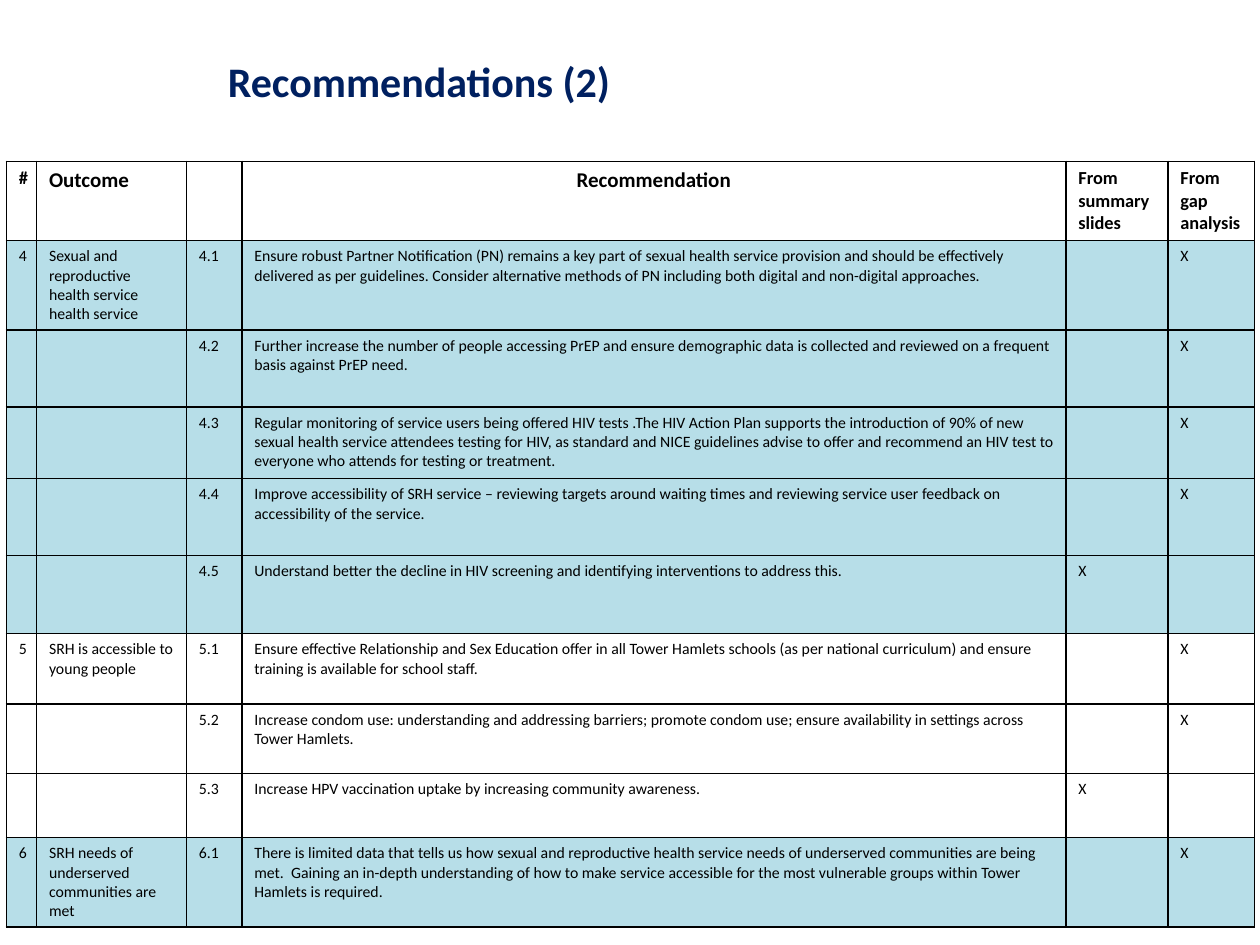
import pptx
import pptx.dml.color
import pptx.enum.text
import pptx.oxml.ns
import pptx.util
from lxml import etree

Inches, Pt = pptx.util.Inches, pptx.util.Pt
RGBColor = pptx.dml.color.RGBColor
ALIGN = pptx.enum.text.PP_ALIGN
qn = pptx.oxml.ns.qn

NAVY = RGBColor(0x00, 0x20, 0x60)
BLACK = RGBColor(0x00, 0x00, 0x00)
WHITE = RGBColor(0xFF, 0xFF, 0xFF)
PALE_BLUE = RGBColor(0xB7, 0xDE, 0xE8)

COLUMN_WIDTHS = [0.23, 1.19, 0.44, 6.54, 0.81, 0.69]
ROW_HEIGHTS = [0.63, 0.71, 0.61, 0.57, 0.61, 0.62, 0.56, 0.55, 0.51, 0.71]
HEADER_SIZES = [10.5, 12, 12, 12, 10.5, 10.5]
HEADINGS = ["#", "Outcome", "", "Recommendation", "From summary\nslides", "From\ngap\nanalysis"]
SUMMARY, GAP = ["X", ""], ["", "X"]

# Each outcome: number, name, row colour, and its recommendations with their origin
OUTCOMES = [
    (4, "Sexual and reproductive health service health service", PALE_BLUE, [
        ("Ensure robust Partner Notification (PN) remains a key part of sexual health service "
         "provision and should be effectively delivered as per guidelines. Consider alternative "
         "methods of PN including both digital and non-digital approaches.", GAP),
        ("Further increase the number of people accessing PrEP and ensure demographic data is "
         "collected and reviewed on a frequent basis against PrEP need.", GAP),
        ("Regular monitoring of service users being offered HIV tests .The HIV Action Plan supports "
         "the introduction of 90% of new sexual health service attendees testing for HIV, as "
         "standard and NICE guidelines advise to offer and recommend an HIV test to everyone who "
         "attends for testing or treatment.", GAP),
        ("Improve accessibility of SRH service – reviewing targets around waiting times and "
         "reviewing service user feedback on accessibility of the service.", GAP),
        ("Understand better the decline in HIV screening and identifying interventions to "
         "address this.", SUMMARY),
    ]),
    (5, "SRH is accessible to young people", WHITE, [
        ("Ensure effective Relationship and Sex Education offer in all Tower Hamlets schools (as "
         "per national curriculum) and ensure training is available for school staff.", GAP),
        ("Increase condom use: understanding and addressing barriers; promote condom use; ensure "
         "availability in settings across Tower Hamlets.", GAP),
        ("Increase HPV vaccination uptake by increasing community awareness.", SUMMARY),
    ]),
    (6, "SRH needs of underserved communities are met", PALE_BLUE, [
        ("There is limited data that tells us how sexual and reproductive health service needs of "
         "underserved communities are being met.  Gaining an in-depth understanding of how to make "
         "service accessible for the most vulnerable groups within Tower Hamlets is required.", GAP),
    ]),
]


def write(frame, text, size, bold, color, align=ALIGN.LEFT):
    frame.text = text
    font_format = {"name": "Calibri", "size": Pt(size), "bold": bold}
    for paragraph in frame.paragraphs:
        paragraph.alignment = align
        for key, value in font_format.items():
            setattr(paragraph.font, key, value)
            for run in paragraph.runs:
                setattr(run.font, key, value)
        for run in paragraph.runs:
            run.font.color.rgb = color


def outline(cell):
    """Draw a 1 pt black border on all four sides; call before filling the cell."""
    properties = cell._tc.get_or_add_tcPr()
    for side in ("a:lnL", "a:lnR", "a:lnT", "a:lnB"):
        line = etree.SubElement(properties, qn(side), w=str(Pt(1)))
        solid = etree.SubElement(line, qn("a:solidFill"))
        etree.SubElement(solid, qn("a:srgbClr"), val=str(BLACK))


deck = pptx.Presentation()
deck.slide_width, deck.slide_height = Inches(10), Inches(7.5)
slide = deck.slides.add_slide(deck.slide_layouts[6])

title = slide.shapes.add_textbox(Inches(1.71), Inches(0.39), Inches(7.43), Inches(0.77))
title.text_frame.word_wrap = True
write(title.text_frame, "Recommendations (2)", 24, True, NAVY)

lines = [(HEADINGS, WHITE)]
for number, outcome, color, recommendations in OUTCOMES:
    for index, (recommendation, origin) in enumerate(recommendations, 1):
        lead = [str(number), outcome] if index == 1 else ["", ""]
        lines.append((lead + [f"{number}.{index}", recommendation] + origin, color))

table = slide.shapes.add_table(
    len(lines), len(COLUMN_WIDTHS), Inches(0.05), Inches(1.28),
    Inches(sum(COLUMN_WIDTHS)), Inches(sum(ROW_HEIGHTS))).table
table.first_row = table.horz_banding = False
for column, width in zip(table.columns, COLUMN_WIDTHS):
    column.width = Inches(width)
for row, height in zip(table.rows, ROW_HEIGHTS):
    row.height = Inches(height)

for r, (texts, color) in enumerate(lines):
    is_header = r == 0
    for c, text in enumerate(texts):
        cell = table.cell(r, c)
        outline(cell)
        cell.fill.solid()
        cell.fill.fore_color.rgb = color
        write(cell.text_frame, text, HEADER_SIZES[c] if is_header else 9, is_header, BLACK,
              ALIGN.CENTER if is_header and text == "Recommendation" else ALIGN.LEFT)

deck.save("out.pptx")
